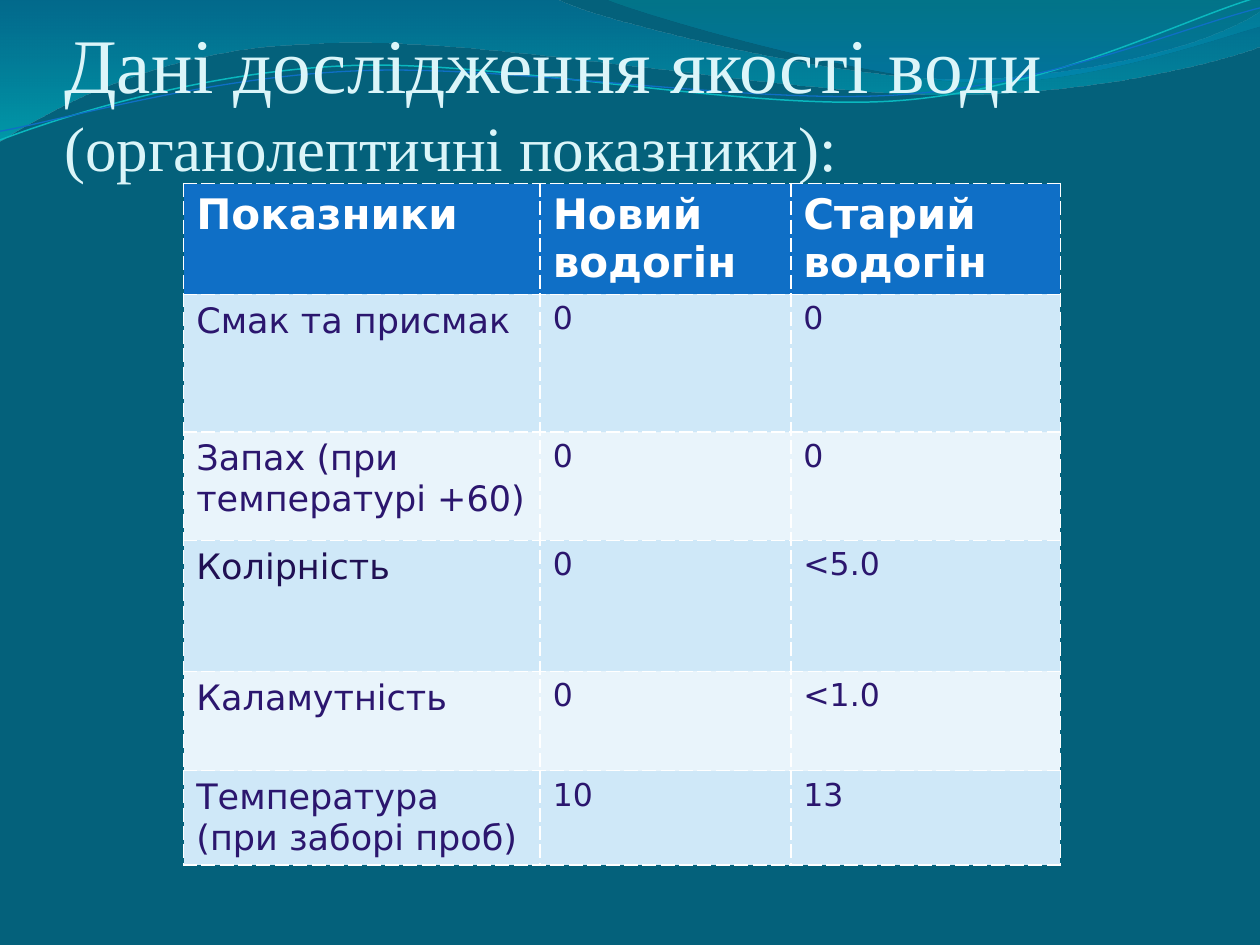
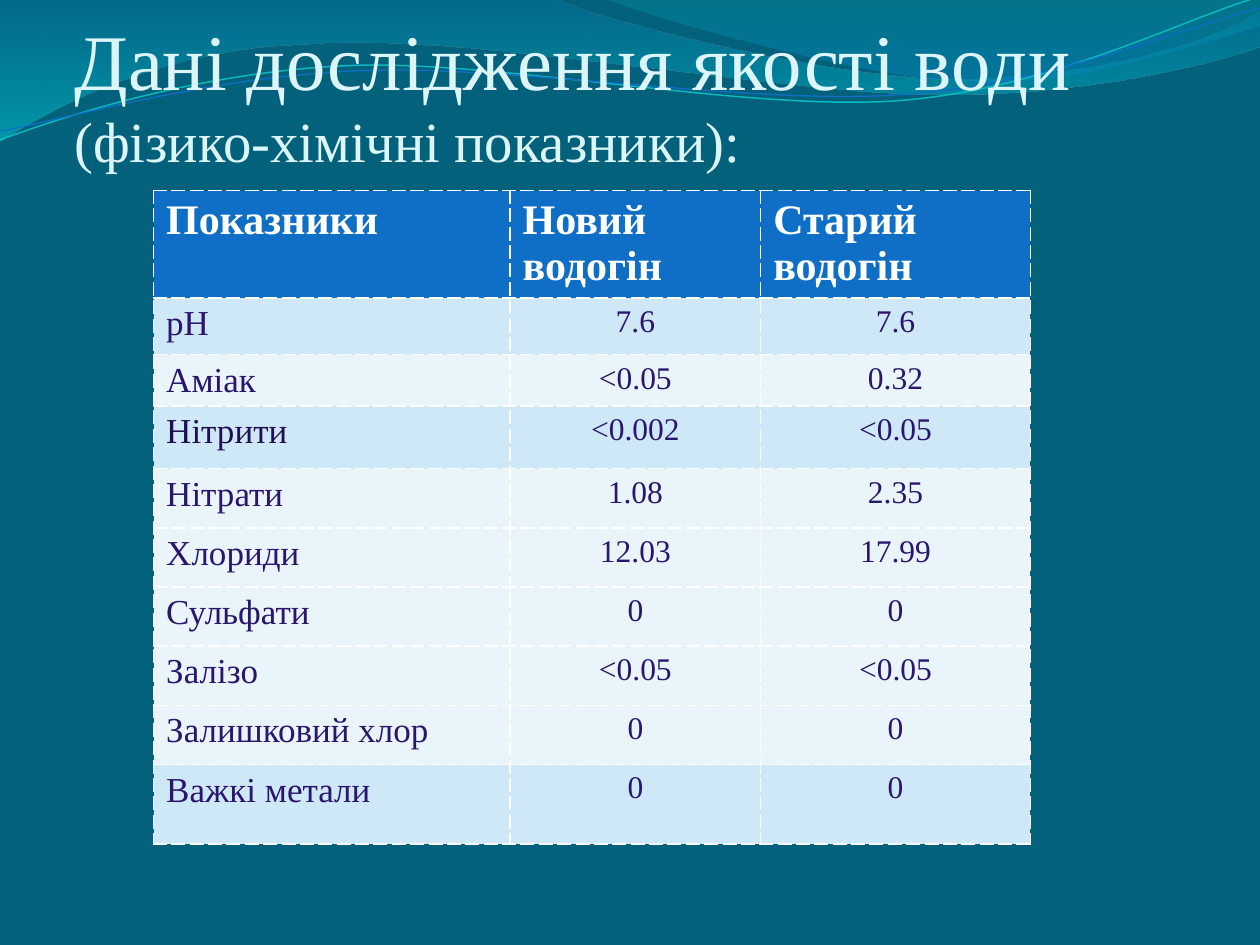
import pptx
import pptx.util
import pptx.dml.color
import pptx.enum.text
import pptx.oxml
import pptx.oxml.ns
import lxml.etree

Pt = pptx.util.Pt
qn = pptx.oxml.ns.qn
Align = pptx.enum.text.PP_ALIGN

COLORS = {
    "back": "04617B", "title": "DBF5F9", "head": "0F6FC6", "white": "FFFFFF",
    "dark": "CFE8F8", "light": "E9F4FB", "ink": "2B166E", "deep": "201053",
    "teal": "0AB8BF", "blue": "0F6FC6",
    "sea": "0074A1", "aqua": "00C6CF", "green": "00A1A9", "sky": "008BBF",
}
SERIF, SANS = "Times New Roman", "DejaVu Sans"

# A path is a list of points: two numbers draw a line, six a Bezier curve.
# Each gradient stop is position, colour, opacity in percent.
BANDS = [
    ([(0, 0), (317, -1), (343, 12, 478, 45, 546, 45), (614, 45, 690, 27, 720, 6.5),
      (721, 26), (708, 32, 626, 55, 537, 54), (447, 54, 275, 20, 185, 24.5),
      (93, 26, 33, 60, -1, 81), (0, 0)],
     [(0, "sea", 45), (1, "aqua", 55)]),
    ([(345, -1), (366, 8, 491, 45, 554, 47), (616, 50, 692, 23, 720, 15), (720, 0),
      (345, -1)],
     [(0, "green", 30), (0.8, "sky", 45)]),
]
LINES = [
    ([(0, 80), (34.5, 67, 114, 41, 199.5, 37.5), (284.5, 34, 427, 64, 513.5, 57.5),
      (600, 51, 675.5, 11, 718.5, -1.5)], "teal", 0.85),
    ([(0, 75), (34, 69, 118, 44, 204, 40.5), (290, 36.5, 430, 60.5, 516, 54),
      (602, 48, 677.5, 15, 720, 4.5)], "blue", 0.75),
]

HEAD = ("Показники", "Новий водогін", "Старий водогін")
WIDTHS = (203.7, 143.2, 154.1)


def rgb(name):
    return pptx.dml.color.RGBColor.from_string(COLORS[name])


def bend(shape, path):
    """Turn the straight segments of a freeform into the curves of its path."""
    lines = list(shape._element.iter(qn("a:lnTo")))
    for line, part in zip(lines, path[1:]):
        if len(part) == 2:
            continue
        curve = lxml.etree.Element(qn("a:cubicBezTo"))
        for x, y in zip(part[::2], part[1::2]):
            lxml.etree.SubElement(curve, qn("a:pt"), x=str(Pt(x) - shape.left),
                                  y=str(Pt(y) - shape.top))
        line.getparent().replace(line, curve)


class Deck:
    def __init__(self):
        self.show = pptx.Presentation()
        self.show.slide_width, self.show.slide_height = Pt(720), Pt(540)
        self.slide = None

    def page(self):
        self.slide = self.show.slides.add_slide(self.show.slide_layouts[6])
        fill = self.slide.background.fill
        fill.solid()
        fill.fore_color.rgb = rgb("back")
        for path, stops in BANDS:
            self.band(path, stops)
        for path, color, width in LINES:
            self.curve(path, color, width)

    def free(self, path, close):
        start, *rest = [tuple(map(Pt, part[-2:])) for part in path]
        pen = self.slide.shapes.build_freeform(*start)
        pen.add_line_segments(rest, close=close)
        shape = pen.convert_to_shape()
        bend(shape, path)
        shape.shadow.inherit = False
        return shape

    def band(self, path, stops):
        shape = self.free(path, True)
        shape.line.fill.background()
        fill = shape.fill
        fill.gradient()
        fill.gradient_angle = 270
        for stop, (place, color, _) in zip(fill.gradient_stops, stops):
            stop.position = place
            stop.color.rgb = rgb(color)
        marks = shape._element.spPr.iter(qn("a:srgbClr"))
        for mark, (_, _, alpha) in zip(marks, stops):
            lxml.etree.SubElement(mark, qn("a:alpha")).set("val", str(alpha * 1000))

    def curve(self, path, color, width):
        shape = self.free(path, False)
        shape.fill.background()
        shape.line.color.rgb = rgb(color)
        shape.line.width = Pt(width)

    def run(self, para, text, size, color, font, bold=False):
        run = para.add_run()
        run.text = text
        run.font.size, run.font.name, run.font.bold = Pt(size), font, bold
        run.font.color.rgb = rgb(color)

    def title(self, box, *parts):
        frame = self.slide.shapes.add_textbox(*map(Pt, box)).text_frame
        frame.word_wrap = True
        frame.vertical_anchor = pptx.enum.text.MSO_ANCHOR.BOTTOM
        frame.margin_left = frame.margin_right = frame.margin_bottom = 0
        frame.margin_top = Pt(3.6)
        for text, size in parts:
            self.run(frame.paragraphs[0], text, size, "title", SERIF)

    def edge(self, cell):
        """Give a cell dashed white borders; call before setting its fill."""
        props = cell._tc.get_or_add_tcPr()
        for side in ("lnL", "lnR", "lnT", "lnB"):
            line = lxml.etree.SubElement(props, qn("a:" + side), w=str(Pt(1)))
            solid = lxml.etree.SubElement(line, qn("a:solidFill"))
            lxml.etree.SubElement(solid, qn("a:srgbClr"), val=COLORS["white"])
            lxml.etree.SubElement(line, qn("a:prstDash"), val="sysDash")

    def cell(self, cell, text, fill, size, color, font, bold, align):
        self.edge(cell)
        cell.margin_bottom = 0
        cell.fill.solid()
        cell.fill.fore_color.rgb = rgb(fill)
        para = cell.text_frame.paragraphs[0]
        para.alignment = align
        self.run(para, text, size, color, font, bold)

    def table(self, left, top, heights, rows, tones, font, align):
        """Draw the header and rows; tones holds d (dark) or l (light) per row."""
        frame = self.slide.shapes.add_table(
            len(rows) + 1, len(HEAD), Pt(left), Pt(top), Pt(sum(WIDTHS)), Pt(sum(heights)))
        table = frame.table
        table.horz_banding = False
        for column, width in zip(table.columns, WIDTHS):
            column.width = Pt(width)
        for row, height in zip(table.rows, heights):
            row.height = Pt(height)
        for j, text in enumerate(HEAD):
            self.cell(table.cell(0, j), text, "head", 24, "white", font, True, Align.LEFT)
        for i, (row, tone) in enumerate(zip(rows, tones), 1):
            fill = "dark" if tone == "d" else "light"
            for j, text in enumerate(row):
                size, side = (18, align) if j else (20, Align.LEFT)
                color = "deep" if (i, j) == (3, 0) else "ink"
                self.cell(table.cell(i, j), text, fill, size, color, font, False, side)


def main():
    deck = Deck()
    lead = "Дані дослідження якості води "

    deck.page()
    deck.title((36.7, 11.7, 647.3, 93.6), (lead, 44.1), ("(органолептичні показники):", 36))
    senses = [
        ("Смак та присмак", "0", "0"),
        ("Запах (при температурі +60)", "0", "0"),
        ("Колірність", "0", "<5.0"),
        ("Каламутність", "0", "<1.0"),
        ("Температура (при заборі проб)", "10", "13"),
    ]
    heights = (63.2, 78.6, 62.1, 74.8, 56.7, 54)
    deck.table(105, 105, heights, senses, "dldld", SANS, Align.LEFT)

    deck.page()
    deck.title((42.5, 11.8, 641.5, 87.8), (lead, 45), ("(фізико-хімічні показники):", 32.4))
    physics = [
        ("рН", "7.6", "7.6"),
        ("Аміак", "<0.05", "0.32"),
        ("Нітрити", "<0.002", "<0.05"),
        ("Нітрати", "1.08", "2.35"),
        ("Хлориди", "12.03", "17.99"),
        ("Сульфати", "0", "0"),
        ("Залізо", "<0.05", "<0.05"),
        ("Залишковий хлор", "0", "0"),
        ("Важкі метали", "0", "0"),
    ]
    heights = (60.3, 32.4, 29.4, 35.8, *[33.84] * 5, 45.4)
    deck.table(87.8, 109, heights, physics, "dldllllld", SERIF, Align.CENTER)

    deck.show.save("out.pptx")


if __name__ == "__main__":
    main()
